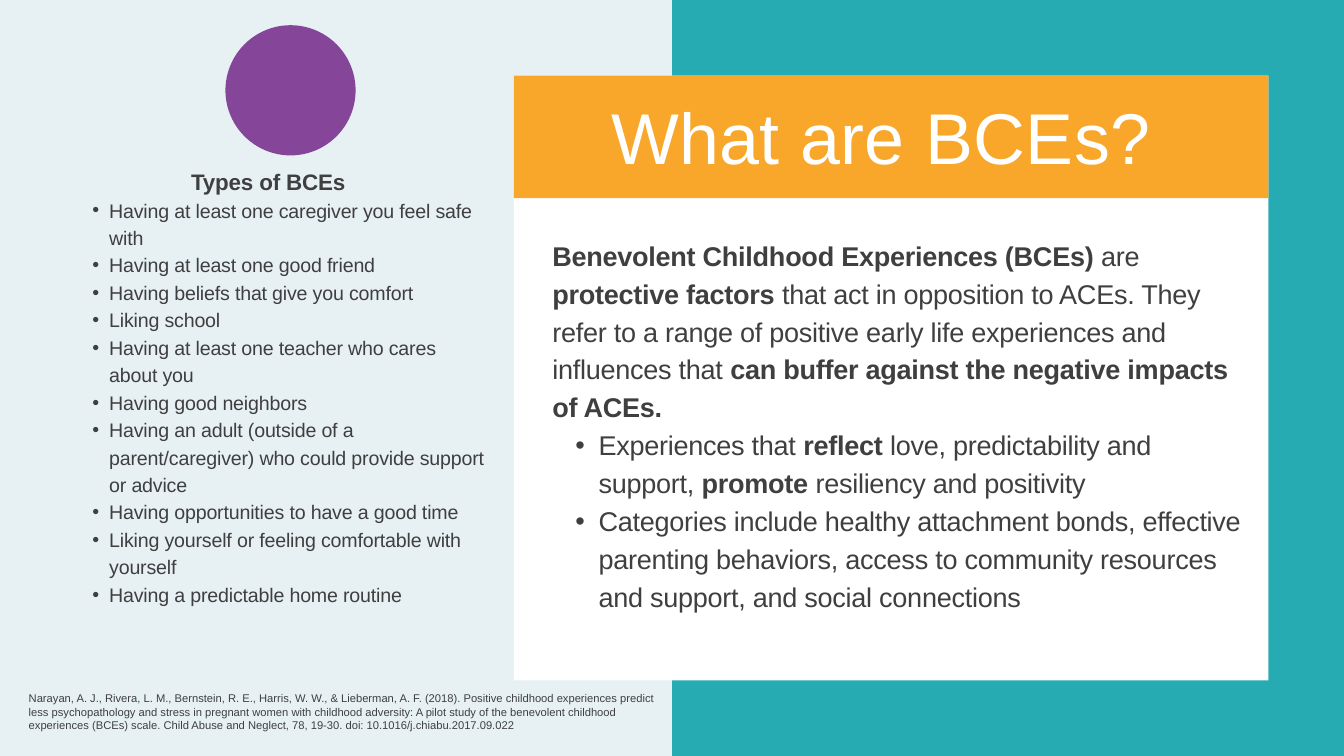
from lxml import etree
from pptx import Presentation
from pptx.dml.color import RGBColor
from pptx.enum.shapes import MSO_SHAPE
from pptx.enum.text import MSO_ANCHOR, MSO_AUTO_SIZE, PP_ALIGN
from pptx.oxml.ns import qn
from pptx.util import Pt

PX = 9525
RECT, OVAL = MSO_SHAPE.RECTANGLE, MSO_SHAPE.OVAL
TOP, NO_FIT = MSO_ANCHOR.TOP, MSO_AUTO_SIZE.NONE
LEFT, CENTER = PP_ALIGN.LEFT, PP_ALIGN.CENTER

TEAL = RGBColor(0x27, 0xAB, 0xB3)
PALE = RGBColor(0xE7, 0xF1, 0xF4)
WHITE = RGBColor(0xFF, 0xFF, 0xFF)
ORANGE = RGBColor(0xF8, 0xA7, 0x2B)
PURPLE = RGBColor(0x85, 0x46, 0x9A)
GREY = RGBColor(0x3F, 0x3F, 0x40)

DEFINITION = (
    "**Benevolent Childhood Experiences (BCEs) **are **protective factors **that act in "
    "opposition to ACEs. They refer to a range of positive early life experiences and "
    "influences that **can buffer against the negative impacts of ACEs.**"
)
DETAILS = [
    "Experiences that **reflect** love, predictability and support, **promote** resiliency "
    "and positivity",
    "Categories include healthy attachment bonds, effective parenting behaviors, access to "
    "community resources and support, and social connections",
]
TYPES = [
    "Having at least one caregiver you feel safe with",
    "Having at least one good friend",
    "Having beliefs that give you comfort",
    "Liking school",
    "Having at least one teacher who cares about you",
    "Having good neighbors",
    "Having an adult (outside of a parent/caregiver) who could provide support or advice",
    "Having opportunities to have a good time",
    "Liking yourself or feeling comfortable with yourself",
    "Having a predictable home routine",
]
CITATION = (
    "Narayan, A. J., Rivera, L. M., Bernstein, R. E., Harris, W. W., & Lieberman, A. F. (2018). "
    "Positive childhood experiences predict less psychopathology and stress in pregnant women "
    "with childhood adversity: A pilot study of the benevolent childhood experiences (BCEs) "
    "scale. Child Abuse and Neglect, 78, 19-30. doi: 10.1016/j.chiabu.2017.09.022"
)


def write(p, text, size, leading, color=GREY, spc=0, align=LEFT, indent=0, font="Arial"):
    """Fill a paragraph, with **bold** marks and an optional bullet hanging at indent px."""
    p.alignment = align
    p.line_spacing = Pt(leading)
    p.space_before = p.space_after = Pt(0)
    if indent:
        p.level = 1
        pPr = p._p.get_or_add_pPr()
        pPr.set("marL", str(indent * PX))
        pPr.set("indent", str(-indent * PX // 2))
        etree.SubElement(pPr, qn("a:buFont")).set("typeface", font)
        etree.SubElement(pPr, qn("a:buChar")).set("char", "•")
    for i, part in enumerate(text.split("**")):
        if part:
            r = p.add_run()
            r.text = part
            r.font.name, r.font.size, r.font.bold = font, Pt(size), i % 2 == 1
            r.font.color.rgb = color
            r._r.get_or_add_rPr().set("spc", str(spc))


class Deck:
    """Hold the presentation style and the current slide."""

    def __init__(self, width, height, background):
        self.prs = Presentation()
        self.prs.slide_width, self.prs.slide_height = width * PX, height * PX
        self.s = self.prs.slides.add_slide(self.prs.slide_layouts[5])
        self.s.background.fill.solid()
        self.s.background.fill.fore_color.rgb = background

    def shape(self, kind, x, y, w, h, color):
        """Draw a plain filled shape."""
        sp = self.s.shapes.add_shape(kind, x * PX, y * PX, w * PX, h * PX)
        sp.shadow.inherit = False
        sp.fill.solid()
        sp.fill.fore_color.rgb = color
        sp.line.fill.background()

    def frame(self, sp):
        """Give a text shape wrapping, top anchoring and no insets."""
        tf = sp.text_frame
        tf.word_wrap, tf.auto_size, tf.vertical_anchor = True, NO_FIT, TOP
        tf.margin_left = tf.margin_right = tf.margin_top = tf.margin_bottom = 0
        return tf

    def title(self, x, y, w, h, text, **style):
        """Place the title placeholder above the shapes drawn so far."""
        sp = self.s.shapes.title
        self.s.shapes.element.append(sp.element)
        sp.left, sp.top, sp.width, sp.height = x * PX, y * PX, w * PX, h * PX
        write(self.frame(sp).paragraphs[0], text, **style)

    def text(self, x, y, w, h, lead=None, bullets=(), indent=0, **style):
        """Add a text box with a lead paragraph, bullets or both."""
        tf = self.frame(self.s.shapes.add_textbox(x * PX, y * PX, w * PX, h * PX))
        items = [(lead, 0)] if lead else []
        items += [(bullet, indent) for bullet in bullets]
        for i, (item, hang) in enumerate(items):
            p = tf.add_paragraph() if i else tf.paragraphs[0]
            write(p, item, indent=hang, **style)


def main():
    """Build the slide."""
    deck = Deck(1920, 1080, TEAL)
    deck.shape(RECT, 0, 0, 960, 1080, PALE)
    deck.shape(RECT, 734, 108, 1078, 864, WHITE)
    deck.shape(RECT, 734, 108, 1078, 175, ORANGE)
    deck.text(789, 334, 984, 591, DEFINITION, DETAILS, indent=66, size=29, leading=40.6, spc=-30)
    deck.title(789, 142, 969, 114, "What are BCEs? ", size=77, leading=84.7, color=WHITE,
               spc=40, align=CENTER)
    deck.text(273, 234, 285, 41, "**Types of BCEs**", size=24, leading=33.6, spc=-20)
    deck.text(108, 278, 584, 623, bullets=TYPES, indent=48, size=21, leading=29.4, spc=-20)
    deck.text(41, 988, 919, 76, CITATION, size=12, leading=14.4)
    deck.shape(OVAL, 322, 36, 186, 186, PURPLE)
    deck.prs.save("out.pptx")


if __name__ == "__main__":
    main()
